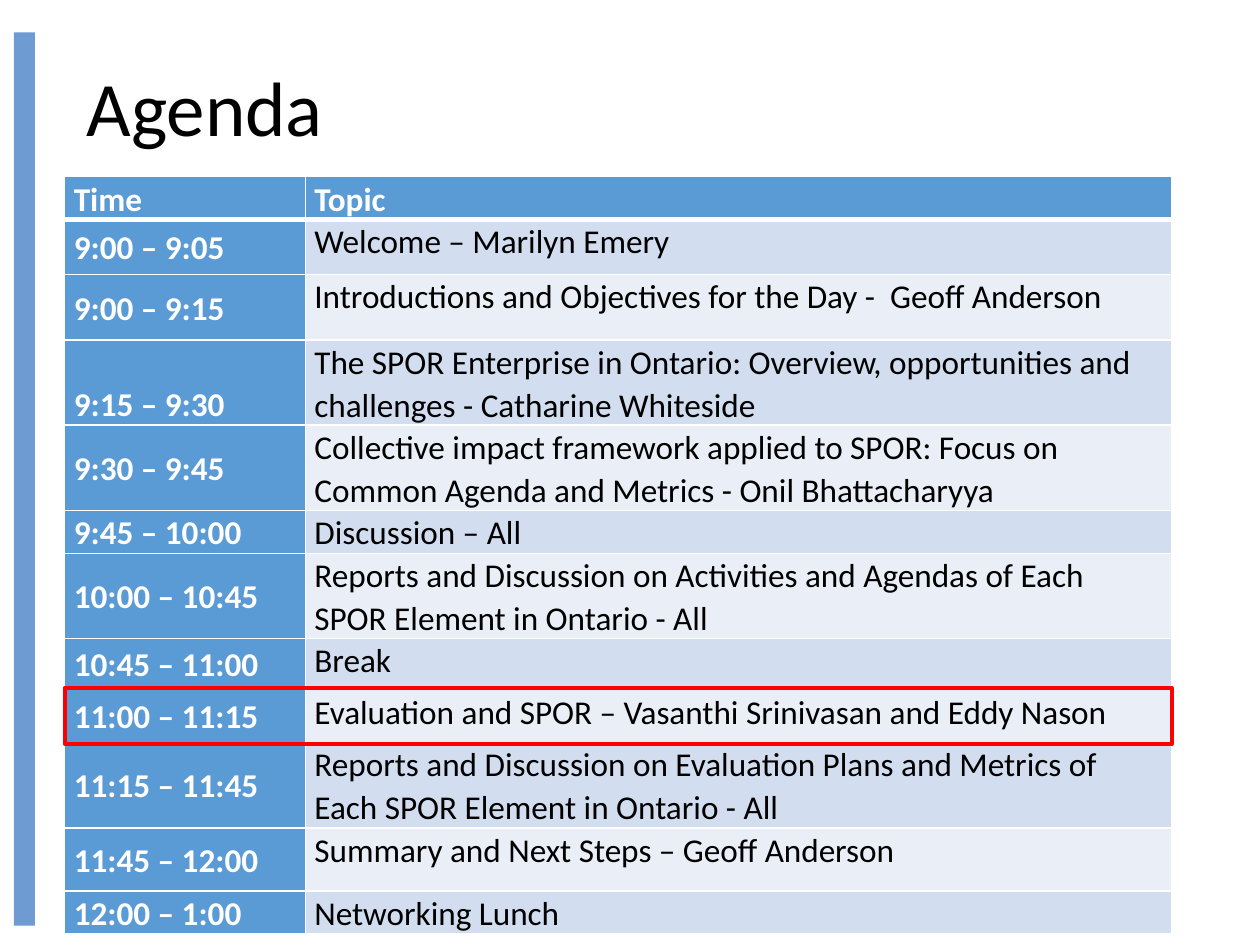
from lxml import etree
from pptx import Presentation
from pptx.dml.color import RGBColor
from pptx.enum.shapes import MSO_SHAPE
from pptx.enum.text import MSO_ANCHOR
from pptx.oxml.ns import qn
from pptx.util import Pt

RECT = MSO_SHAPE.RECTANGLE
TOP, MIDDLE, BOTTOM = MSO_ANCHOR.TOP, MSO_ANCHOR.MIDDLE, MSO_ANCHOR.BOTTOM

THEME = {
    "font": "Calibri", "title_size": 44, "table_size": 19,
    "text": "000000", "white": "FFFFFF", "bar": "6E9BD2",
    "header": "5B9BD5", "bands": ("D2DEEF", "EAEFF7"), "highlight": "FF0000",
}

TITLE = "Agenda"
# time, topic, row height, anchor of the time, anchor of the topic
AGENDA = [
    ("Time", "Topic", 24, TOP, TOP),
    ("9:00 – 9:05", "Welcome – Marilyn Emery", 31.6, MIDDLE, TOP),
    ("9:00 – 9:15", "Introductions and Objectives for the Day -  Geoff Anderson",
     37.2, MIDDLE, TOP),
    ("9:15 – 9:30", "The SPOR Enterprise in Ontario: Overview, opportunities and "
     "challenges - Catharine Whiteside", 47.7, BOTTOM, MIDDLE),
    ("9:30 – 9:45", "Collective impact framework applied to SPOR: Focus on "
     "Common Agenda and Metrics - Onil Bhattacharyya", 47.7, MIDDLE, TOP),
    ("9:45 – 10:00", "Discussion – All", 24, TOP, TOP),
    ("10:00 – 10:45", "Reports and Discussion on Activities and Agendas of Each "
     "SPOR Element in Ontario - All", 47.7, MIDDLE, TOP),
    ("10:45 – 11:00", "Break", 29.2, MIDDLE, TOP),
    ("11:00 – 11:15", "Evaluation and SPOR – Vasanthi Srinivasan and Eddy Nason",
     30.2, MIDDLE, TOP),
    ("11:15 – 11:45", "Reports and Discussion on Evaluation Plans and Metrics of "
     "Each SPOR Element in Ontario - All", 47.7, MIDDLE, TOP),
    ("11:45 – 12:00", "Summary and Next Steps – Geoff Anderson", 36, MIDDLE, TOP),
    ("12:00 – 1:00", "Networking Lunch", 24, MIDDLE, TOP),
]
COLUMNS = (137.5, 495)
TABLE_LEFT, TABLE_TOP = 37, 101


def rgb(value):
    return RGBColor.from_string(value)


def style_text(p, size, color, spacing, bold=False):
    p.line_spacing = spacing
    for r in p.runs:
        r.font.name = THEME["font"]
        r.font.size = Pt(size)
        r.font.bold = bold
        r.font.color.rgb = rgb(color)


def set_borders(cell, bottom, top):
    """Draw white lines of the given widths; the sides are 1 point."""
    widths = (("a:lnL", 1), ("a:lnR", 1), ("a:lnT", top), ("a:lnB", bottom))
    tcPr = cell._tc.get_or_add_tcPr()
    for i, (tag, width) in enumerate(widths):
        ln = etree.Element(qn(tag), w=str(Pt(width)))
        fill = etree.SubElement(ln, qn("a:solidFill"))
        etree.SubElement(fill, qn("a:srgbClr"), val=THEME["white"])
        tcPr.insert(i, ln)


def add_rect(s, left, top, width, height):
    sp = s.shapes.add_shape(RECT, Pt(left), Pt(top), Pt(width), Pt(height))
    sp.shadow.inherit = False
    return sp


def add_agenda(s):
    heights = [row[2] for row in AGENDA]
    table = s.shapes.add_table(
        len(AGENDA), len(COLUMNS), Pt(TABLE_LEFT), Pt(TABLE_TOP),
        Pt(sum(COLUMNS)), Pt(sum(heights))).table
    for column, width in zip(table.columns, COLUMNS):
        column.width = Pt(width)
    for i, (time, topic, height, *anchors) in enumerate(AGENDA):
        table.rows[i].height = Pt(height)
        for j, text in enumerate((time, topic)):
            heading = i == 0 or j == 0
            cell = table.cell(i, j)
            cell.text_frame.text = text
            cell.vertical_anchor = anchors[j]
            cell.margin_left = cell.margin_right = Pt(5.2)
            cell.margin_top = cell.margin_bottom = 0
            cell.fill.solid()
            cell.fill.fore_color.rgb = rgb(
                THEME["header"] if heading else THEME["bands"][(i - 1) % 2])
            set_borders(cell, bottom=3 if i == 0 else 1, top=3 if i == 1 else 1)
            style_text(cell.text_frame.paragraphs[0], THEME["table_size"],
                       THEME["white"] if heading else THEME["text"], 1.07, heading)


def main():
    prs = Presentation()
    prs.slide_width, prs.slide_height = Pt(720), Pt(540)
    s = prs.slides.add_slide(prs.slide_layouts[6])

    bar = add_rect(s, 8, 18.5, 12, 510.5)
    bar.fill.solid()
    bar.fill.fore_color.rgb = rgb(THEME["bar"])
    bar.line.fill.background()

    title = s.shapes.add_textbox(Pt(42.5), Pt(11.5), Pt(620.5), Pt(104.5))
    tf = title.text_frame
    tf.word_wrap = True
    tf.vertical_anchor = MIDDLE
    tf.text = TITLE
    style_text(tf.paragraphs[0], THEME["title_size"], THEME["text"], 0.9)

    add_agenda(s)

    frame = add_rect(s, TABLE_LEFT, 393, sum(COLUMNS), 32.3)
    frame.fill.background()
    frame.line.color.rgb = rgb(THEME["highlight"])
    frame.line.width = Pt(2.25)

    prs.save("out.pptx")


if __name__ == "__main__":
    main()
